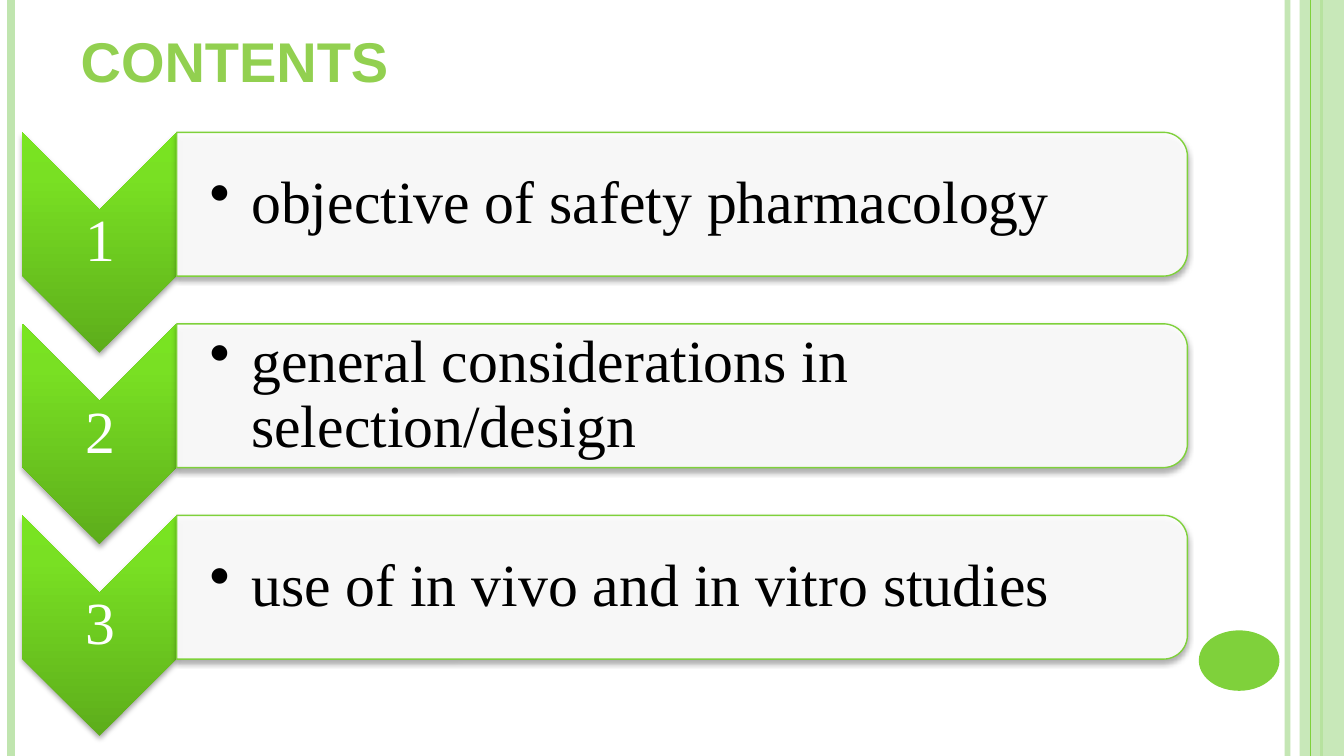
"""Build a contents slide with three numbered chevrons and topic boxes."""
from lxml import etree
from pptx import Presentation
from pptx import util as u
from pptx.dml.color import RGBColor
from pptx.enum import shapes, text
from pptx.oxml import ns

GREEN = RGBColor(0x7F, 0xD1, 0x3B)
PALE_GREEN = RGBColor(0xC0, 0xE5, 0xAF)
TITLE_GREEN = RGBColor(0x92, 0xD0, 0x50)
WHITE = RGBColor(0xFF, 0xFF, 0xFF)
BLACK = RGBColor(0, 0, 0)
CHEVRON_STOPS = ((0, "5DAD1B"), (80, "79E023"), (100, "79E520"))

WIDTH = 10
HEIGHT = WIDTH * 9 / 16
FIRST_TOP, LAST_TOP = 0.98, 3.83
TOPICS = (
    "objective of safety pharmacology ",
    "general considerations in selection/design  ",
    "use of in vivo and in vitro studies",
)


def add_node(parent, tag, **attributes):
    node = etree.SubElement(parent, ns.qn(tag))
    for key, value in attributes.items():
        node.set(key, str(value))
    return node


def set_opacity(properties, percent):
    color = next(properties.iter(ns.qn("a:srgbClr")))
    add_node(color, "a:alpha", val=percent * 1000)


def add_shadow(shape):
    effects = shape.element.spPr.find(ns.qn("a:effectLst"))
    shadow = add_node(effects, "a:outerShdw", blurRad=u.Pt(3.1), dist=u.Pt(1.8),
                      dir=90 * 60000, rotWithShape=0)
    add_node(shadow, "a:srgbClr", val="000000")
    set_opacity(shadow, 35)


def add_solid(slide, kind, box, color):
    solid = slide.shapes.add_shape(kind, *map(u.Inches, box))
    solid.shadow.inherit = False
    solid.fill.solid()
    solid.fill.fore_color.rgb = color
    solid.line.fill.background()
    return solid


def add_rule(slide, x, color, points):
    rule = slide.shapes.add_connector(
        shapes.MSO_CONNECTOR.STRAIGHT,
        u.Inches(x), 0, u.Inches(x), u.Inches(HEIGHT))
    rule.line.color.rgb = color
    rule.line.width = u.Pt(points)
    add_node(rule.element.spPr, "a:effectLst")
    return rule


def add_frame(slide):
    inner_rule = add_rule(slide, 9.58, PALE_GREEN, 3)
    set_opacity(inner_rule.element.spPr, 93)
    add_rule(slide, 0.08, PALE_GREEN, 4.5)
    add_rule(slide, 9.83, GREEN, 1.5)
    band = add_solid(slide, shapes.MSO_SHAPE.RECTANGLE,
                     (9.67, 0, 0.33, HEIGHT), PALE_GREEN)
    set_opacity(band.element.spPr, 87)
    add_rule(slide, 9.75, GREEN, 0.75)
    add_solid(slide, shapes.MSO_SHAPE.OVAL, (8.92, 4.69, 0.6, 0.45), GREEN)


def add_title(slide):
    title = slide.shapes.title
    title.left, title.top, title.width, title.height = map(
        u.Inches, (0.5, -0.19, 8.17, 0.94))
    title.text_frame.text = "CONTENTS"
    title.text_frame.vertical_anchor = text.MSO_ANCHOR.BOTTOM
    heading = title.text_frame.paragraphs[0]
    heading.alignment = text.PP_ALIGN.LEFT
    font = heading.runs[0].font
    font.name, font.size, font.bold = "Arial", u.Pt(30), True
    font.color.rgb = TITLE_GREEN


def add_chevron(slide, top):
    chevron = add_solid(slide, shapes.MSO_SHAPE.CHEVRON,
                        (-0.08, top + 0.25, 1.64, 1.15), GREEN)
    chevron.rotation = 90
    chevron.fill.gradient()
    gradient = chevron.element.spPr.find(ns.qn("a:gradFill"))
    gradient.clear()
    gradient.set("rotWithShape", "0")
    stops = add_node(gradient, "a:gsLst")
    for position, color in CHEVRON_STOPS:
        stop = add_node(stops, "a:gs", pos=position * 1000)
        add_node(stop, "a:srgbClr", val=color)
    add_node(gradient, "a:lin", ang=270 * 60000, scaled=0)
    add_shadow(chevron)


def add_topic_box(slide, top):
    topic_box = add_solid(slide, shapes.MSO_SHAPE.ROUND_2_SAME_RECTANGLE,
                          (4.54, top - 3.22, 1.07, 7.52), WHITE)
    topic_box.rotation = 90
    set_opacity(topic_box.element.spPr, 90)
    topic_box.line.color.rgb = GREEN
    topic_box.line.width = u.Pt(0.75)
    add_shadow(topic_box)


def add_label(slide, box, wording, color, left_inset=0.02):
    frame = slide.shapes.add_textbox(*map(u.Inches, box)).text_frame
    frame.word_wrap = True
    frame.vertical_anchor = text.MSO_ANCHOR.MIDDLE
    frame.margin_left = u.Inches(left_inset)
    frame.margin_top = frame.margin_right = frame.margin_bottom = u.Inches(0.02)
    frame.text = wording
    label = frame.paragraphs[0]
    label.line_spacing = 0.9
    font = label.runs[0].font
    font.name, font.size = "Times New Roman", u.Pt(32)
    font.color.rgb = color
    return label


def add_bullet(paragraph):
    paragraph.level = 1
    properties = paragraph._p.get_or_add_pPr()
    properties.set("marL", str(u.Inches(0.31)))
    properties.set("indent", str(u.Inches(-0.31)))
    add_node(properties, "a:buChar", char="••")


def add_topic(slide, top, number, topic):
    add_chevron(slide, top)
    numeral = add_label(slide, (0.17, top + 0.58, 1.15, 0.49), str(number), WHITE)
    numeral.alignment = text.PP_ALIGN.CENTER
    add_topic_box(slide, top)
    add_bullet(add_label(slide, (1.31, top + 0.06, 7.47, 0.96), topic, BLACK, 0.25))


def main():
    deck = Presentation()
    deck.slide_width, deck.slide_height = u.Inches(WIDTH), u.Inches(HEIGHT)
    slide = deck.slides.add_slide(deck.slide_layouts[5])
    add_frame(slide)
    add_title(slide)
    pitch = (LAST_TOP - FIRST_TOP) / (len(TOPICS) - 1)
    for index, topic in enumerate(TOPICS):
        add_topic(slide, FIRST_TOP + index * pitch, index + 1, topic)
    deck.save("out.pptx")


if __name__ == "__main__":
    main()
